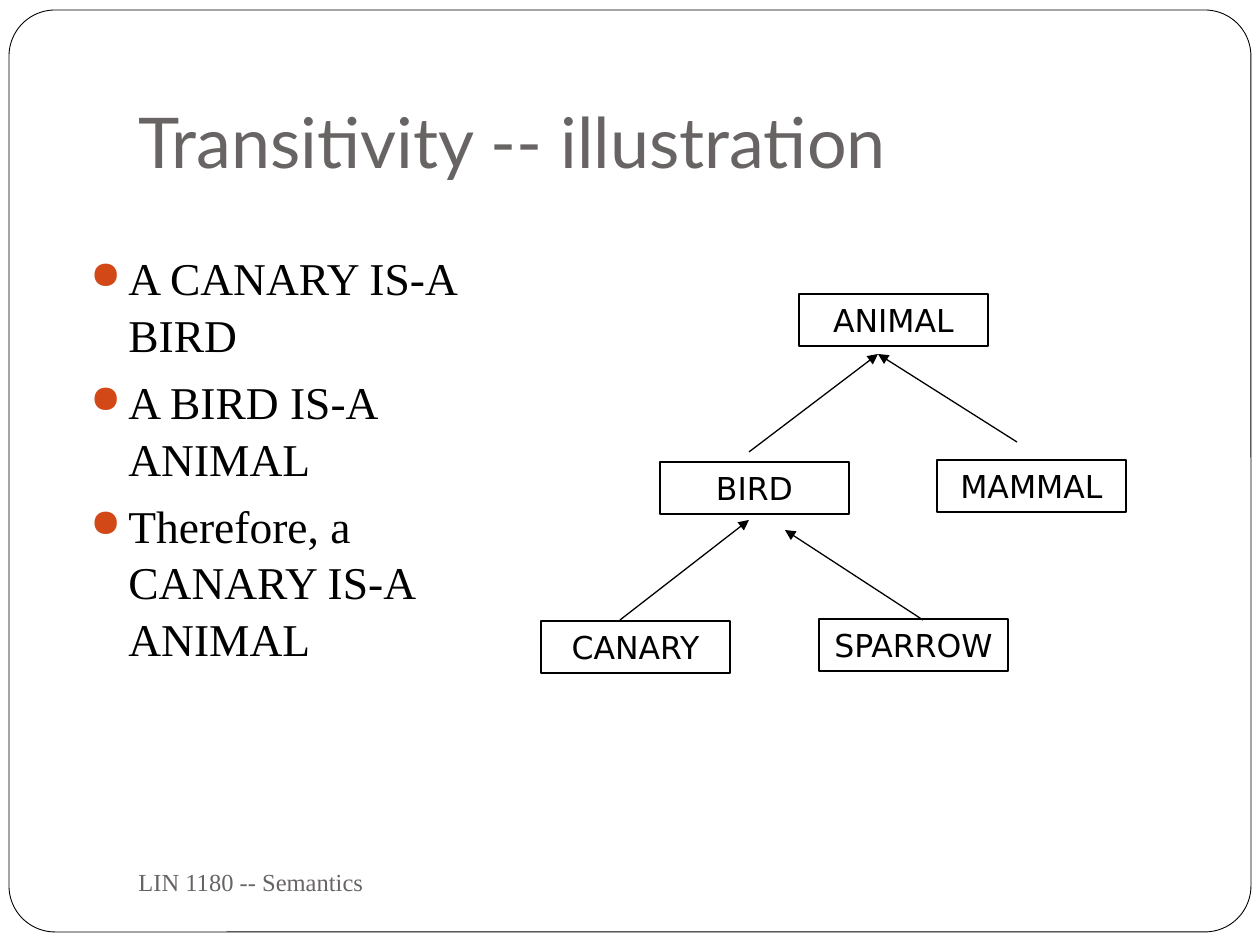
from lxml import etree
from pptx import Presentation
from pptx.dml.color import RGBColor
from pptx.enum.shapes import MSO_CONNECTOR, MSO_SHAPE
from pptx.enum.text import MSO_ANCHOR, PP_ALIGN
from pptx.oxml.ns import qn
from pptx.util import Pt

STRAIGHT = MSO_CONNECTOR.STRAIGHT
RECT, ROUNDED = MSO_SHAPE.RECTANGLE, MSO_SHAPE.ROUNDED_RECTANGLE
TOP, MIDDLE, BOTTOM = MSO_ANCHOR.TOP, MSO_ANCHOR.MIDDLE, MSO_ANCHOR.BOTTOM
LEFT, CENTER = PP_ALIGN.LEFT, PP_ALIGN.CENTER

# Content, in px
SCALE = 914400 / 126
PAGE_SIZE = (1260, 945)
FRAME = (9, 10, 1242, 922)
BLACK, GREY, ORANGE, WHITE = "000000", "696464", "D34817", "FFFFFF"
SERIF = "Times New Roman"

TITLE = "Transitivity -- illustration"
FOOTER = "LIN 1180 -- Semantics"
POINTS = ["A CANARY IS-A BIRD", "A BIRD IS-A ANIMAL",
          "Therefore, a CANARY IS-A ANIMAL"]

NODE_SIZE = (189, 52)
NODES = {  # left, top
    "ANIMAL": (799, 294),
    "BIRD": (660, 462),
    "MAMMAL": (937, 460),
    "CANARY": (541, 621),
    "SPARROW": (819, 619),
}
ARROWS = [  # parent end (with the head), child end
    ((878, 354), (749, 452)),
    ((878, 354), (1017, 442)),
    ((749, 520), (620, 620)),
    ((785, 530), (923, 620)),
]


def px(value):
    return round(value * SCALE)


def color(value):
    return RGBColor.from_string(value)


def add_outline(page, kind, area, fill=None, width=0.75):
    shape = page.shapes.add_shape(kind, *map(px, area))
    shape.shadow.inherit = False
    if fill:
        shape.fill.solid()
        shape.fill.fore_color.rgb = color(fill)
    else:
        shape.fill.background()
    shape.line.color.rgb = color(BLACK)
    shape.line.width = Pt(width)
    return shape


def add_bullet(para, ink, indent=38):
    properties = para._p.get_or_add_pPr()
    properties.set("marL", str(px(indent)))
    properties.set("indent", str(-px(indent)))
    holder = etree.SubElement(properties, qn("a:buClr"))
    etree.SubElement(holder, qn("a:srgbClr"), val=ink)
    etree.SubElement(properties, qn("a:buSzPct"), val="85000")
    etree.SubElement(properties, qn("a:buChar"), char="●")


def write(box, lines, size, font=SERIF, ink=BLACK, align=LEFT, anchor=TOP,
          bullet=None, before=0, spacing=None, bottom=6):
    frame = box.text_frame
    frame.word_wrap = True
    frame.vertical_anchor = anchor
    frame.margin_bottom = px(bottom)
    for index, line in enumerate(lines):
        para = frame.add_paragraph() if index else frame.paragraphs[0]
        para.alignment = align
        para.space_before = Pt(before)
        if spacing:
            para.line_spacing = spacing
        if bullet:
            add_bullet(para, bullet)
        span = para.add_run()
        span.text = line
        span.font.size = Pt(size)
        span.font.name = font
        span.font.color.rgb = color(ink)


def add_text(page, area, lines, **style):
    box = page.shapes.add_textbox(*map(px, area))
    write(box, lines, **style)


def add_arrow(page, parent, child):
    arrow = page.shapes.add_connector(STRAIGHT, *map(px, parent + child))
    arrow.line.color.rgb = color(BLACK)
    arrow.line.width = Pt(0.75)
    etree.SubElement(arrow.line._get_or_add_ln(), qn("a:headEnd"), type="triangle")
    etree.SubElement(arrow._element.spPr, qn("a:effectLst"))


def main():
    deck = Presentation()
    deck.slide_width, deck.slide_height = map(px, PAGE_SIZE)
    page = deck.slides.add_slide(deck.slide_layouts[6])

    # Frame, title, footer and argument
    frame = add_outline(page, ROUNDED, FRAME, fill=WHITE, width=0.5)
    frame.adjustments[0] = 0.05
    add_text(page, (126, 38, 1071, 157), [TITLE], size=40, font="Lato",
             ink=GREY, anchor=BOTTOM, bottom=13)
    add_text(page, (126, 850, 546, 63), [FOOTER], size=14, ink=GREY, anchor=MIDDLE)
    add_text(page, (78, 242, 479, 588), POINTS, size=26, bullet=ORANGE,
             before=5.8, spacing=1.04)

    # Hierarchy
    for parent, child in ARROWS:
        add_arrow(page, parent, child)
    for name, corner in NODES.items():
        box = add_outline(page, RECT, corner + NODE_SIZE)
        write(box, [name], size=18, font="DejaVu Sans", align=CENTER, anchor=MIDDLE)

    deck.save("out.pptx")


if __name__ == "__main__":
    main()
